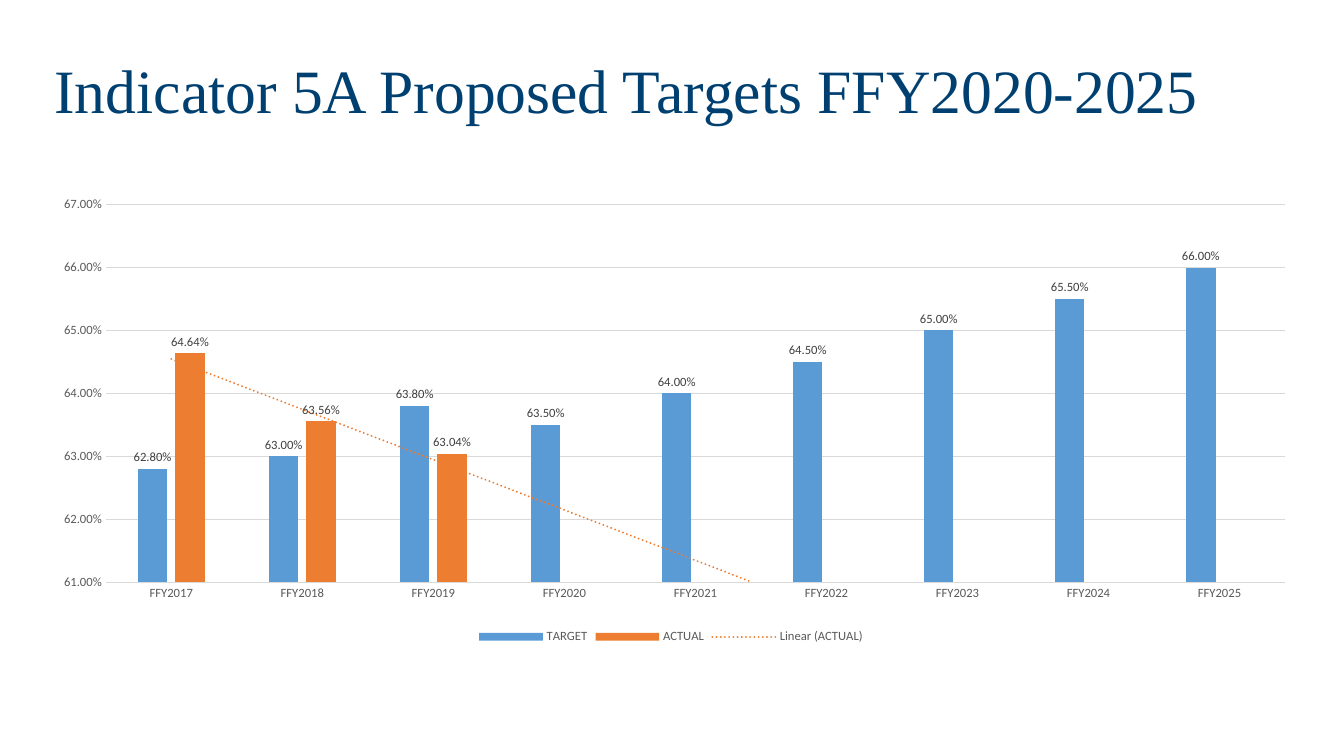
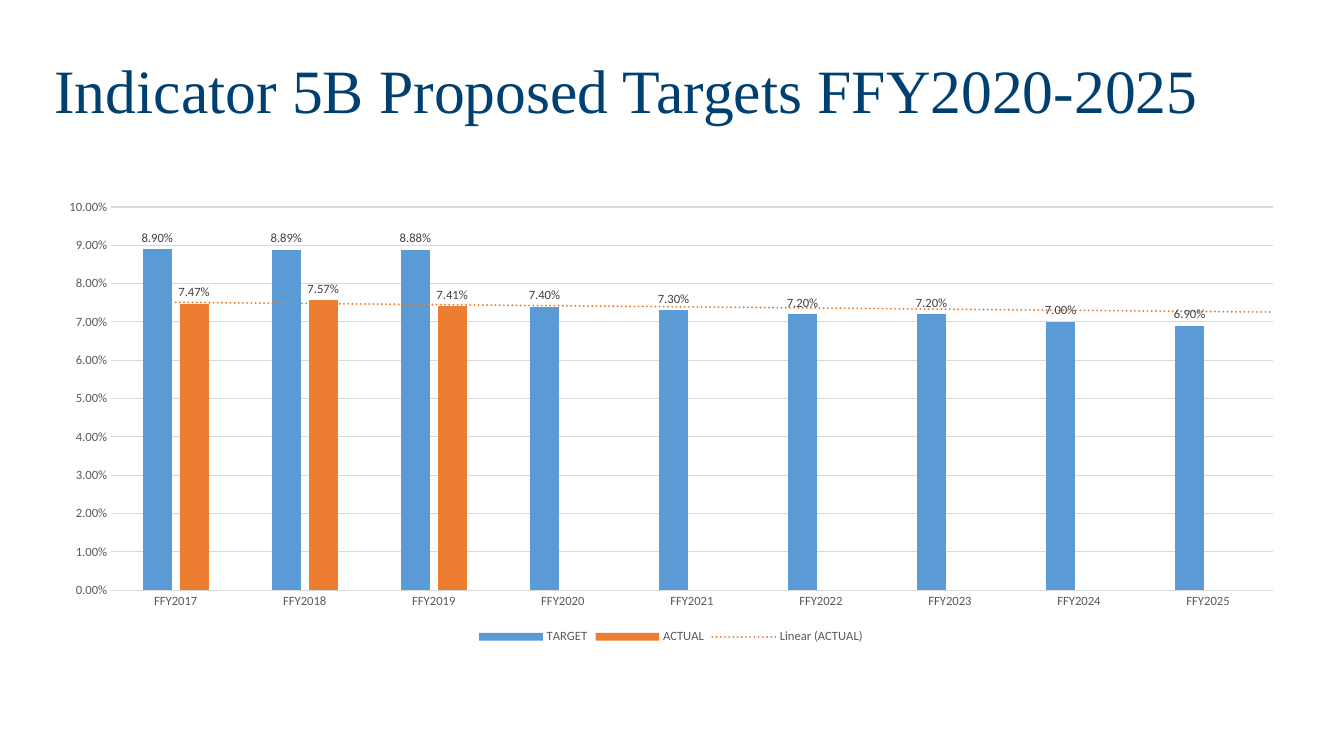
from pptx import Presentation, util as u
from pptx.chart.data import CategoryChartData
from pptx.dml.color import RGBColor
from pptx.enum import chart as charts, text
from pptx.oxml import parse_xml
from pptx.oxml.ns import nsdecls, qn

# Shared look
NAVY, BLUE, ORANGE = "004071", "5B9BD5", "ED7D31"
GRID, AXIS_TEXT, LABEL_TEXT = "D9D9D9", "595959", "404040"
PERCENT = "0.00%"
YEARS = [f"FFY{year}" for year in range(2017, 2026)]

SLIDES = [
    dict(title="Indicator 5A Proposed Targets FFY2020-2025",
         target=[0.628, 0.63, 0.638, 0.635, 0.64, 0.645, 0.65, 0.655, 0.66],
         actual=[0.6464, 0.6356, 0.6304],
         scale=(0.61, 0.67), plot=dict(x=0.049, y=0.031, w=0.941, h=0.825)),
    dict(title="Indicator 5B Proposed Targets FFY2020-2025",
         target=[0.089, 0.0889, 0.0888, 0.074, 0.073, 0.072, 0.072, 0.07, 0.069],
         actual=[0.0747, 0.0757, 0.0741],
         scale=(0, 0.1), plot=None),
]


def colour(value):
    return RGBColor.from_string(value)


def write_text(shape, words, size, name, color):
    frame = shape.text_frame
    frame.text = words
    frame.word_wrap = True
    frame.auto_size = text.MSO_AUTO_SIZE.NONE
    frame.vertical_anchor = text.MSO_ANCHOR.MIDDLE
    paragraph = frame.paragraphs[0]
    paragraph.alignment = text.PP_ALIGN.LEFT
    paragraph.line_spacing = 0.9
    font = paragraph.runs[0].font
    font.size, font.name, font.color.rgb = u.Pt(size), name, colour(color)


presentation = Presentation()
presentation.slide_width, presentation.slide_height = u.Inches(13.33), u.Inches(7.5)
title_only = presentation.slide_layouts[5]
left, width = u.Inches(0.44), u.Inches(12.43)

for content in SLIDES:
    slide = presentation.slides.add_slide(title_only)

    # Title
    title = slide.shapes.title
    title.left, title.top = left, u.Inches(0.16)
    title.width, title.height = width, u.Inches(1.53)
    write_text(title, content["title"], size=44, name="Times New Roman", color=NAVY)

    # Chart data: years without a result stay empty
    data = CategoryChartData(number_format=PERCENT)
    data.categories = YEARS
    missing = [None] * (len(YEARS) - len(content["actual"]))
    data.add_series("TARGET", content["target"])
    data.add_series("ACTUAL", content["actual"] + missing)
    chart = slide.shapes.add_chart(
        charts.XL_CHART_TYPE.COLUMN_CLUSTERED, left, u.Inches(1.89),
        width, u.Inches(4.54), data).chart
    chart.has_title = False
    chart.font.size, chart.font.name = u.Pt(10), "Calibri"
    chart.has_legend = True
    chart.legend.position = charts.XL_LEGEND_POSITION.BOTTOM
    chart.legend.include_in_layout = False

    # Axes
    years, rates = chart.category_axis, chart.value_axis
    for axis in (years, rates):
        axis.major_tick_mark = axis.minor_tick_mark = charts.XL_TICK_MARK.NONE
    rates.minimum_scale, rates.maximum_scale = content["scale"]
    rates.major_unit = 0.01
    rates.tick_labels.number_format = PERCENT
    rates.tick_labels.number_format_is_linked = False
    rates.format.line.fill.background()
    for line in (years.format.line, rates.major_gridlines.format.line):
        line.color.rgb, line.width = colour(GRID), u.Pt(0.75)

    # Columns and their labels
    plot = chart.plots[0]
    plot.gap_width, plot.overlap, plot.vary_by_categories = 219, -27, False
    fonts = [(part.font, AXIS_TEXT)
             for part in (years.tick_labels, rates.tick_labels, chart.legend)]
    for series, fill in zip(plot.series, (BLUE, ORANGE)):
        series.invert_if_negative = False
        series.format.fill.solid()
        series.format.fill.fore_color.rgb = colour(fill)
        labels = series.data_labels
        labels.show_value = True
        labels.position = charts.XL_LABEL_POSITION.OUTSIDE_END
        labels.number_format, labels.number_format_is_linked = PERCENT, False
        fonts.append((labels.font, LABEL_TEXT))
    for font, color in fonts:
        font.size, font.name, font.color.rgb = u.Pt(9), "Calibri", colour(color)

    # Linear trend of the results, carried forward to the last year
    trend = parse_xml(
        f'<c:trendline {nsdecls("c", "a")}><c:spPr><a:ln w="{u.Pt(1.5)}" cap="rnd">'
        f'<a:solidFill><a:srgbClr val="{ORANGE}"/></a:solidFill>'
        '<a:prstDash val="sysDot"/></a:ln></c:spPr><c:trendlineType val="linear"/>'
        f'<c:forward val="{len(missing)}"/><c:dispRSqr val="0"/><c:dispEq val="0"/>'
        '</c:trendline>')
    plot.series[1]._element.find(qn("c:cat")).addprevious(trend)

    # Fixed place of the plot area
    if content["plot"]:
        area = chart._chartSpace.find(".//" + qn("c:plotArea"))
        for layout in area.findall(qn("c:layout")):
            area.remove(layout)
        places = "".join(f'<c:{key} val="{share}"/>'
                         for key, share in content["plot"].items())
        area.insert(0, parse_xml(
            f'<c:layout {nsdecls("c")}><c:manualLayout><c:layoutTarget val="inner"/>'
            '<c:xMode val="edge"/><c:yMode val="edge"/>'
            f'{places}</c:manualLayout></c:layout>'))

presentation.save("out.pptx")
